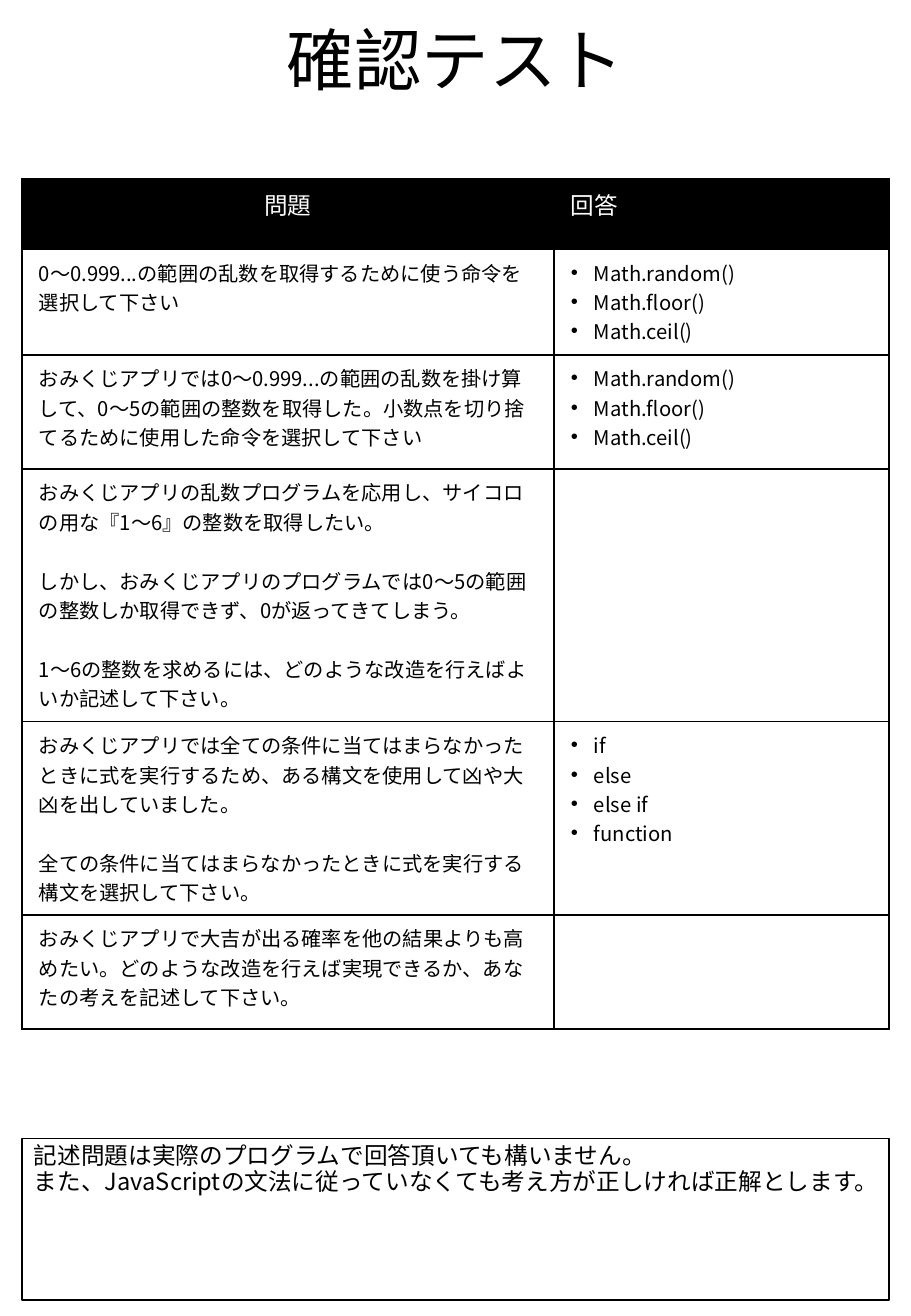
"""Builds a one-page Japanese programming quiz sheet."""
from dataclasses import dataclass

from lxml import etree
from pptx import Presentation
from pptx.dml.color import RGBColor
from pptx.enum.shapes import MSO_SHAPE
from pptx.enum.text import MSO_ANCHOR, PP_ALIGN
from pptx.oxml.ns import qn
from pptx.util import Inches, Pt

RECT = MSO_SHAPE.RECTANGLE
TOP, BOTTOM = MSO_ANCHOR.TOP, MSO_ANCHOR.BOTTOM
LEFT, CENTER = PP_ALIGN.LEFT, PP_ALIGN.CENTER


@dataclass(frozen=True)
class Theme:
    font: str = "Noto Sans CJK JP"
    ink: RGBColor = RGBColor(0, 0, 0)
    paper: RGBColor = RGBColor(255, 255, 255)
    title: int = 40
    heading: int = 14
    body: int = 12
    line: int = 1
    gap: float = 17.4


THEME = Theme()
TITLE = "確認テスト"
HEADER = ("問題", "回答")
MATH_CHOICES = ["Math.random()", "Math.floor()", "Math.ceil()"]
QUESTIONS = [
    (0.87, ["0～0.999...の範囲の乱数を取得するために使う命令を選択して下さい"], MATH_CHOICES),
    (0.94, ["おみくじアプリでは0～0.999...の範囲の乱数を掛け算して、0～5の範囲の整数を取得した。"
            "小数点を切り捨てるために使用した命令を選択して下さい"], MATH_CHOICES),
    (2.08, ["おみくじアプリの乱数プログラムを応用し、サイコロの用な『1～6』の整数を取得したい。",
            "しかし、おみくじアプリのプログラムでは0～5の範囲の整数しか取得できず、0が返ってきてしまう。",
            "1～6の整数を求めるには、どのような改造を行えばよいか記述して下さい。"], []),
    (1.59, ["おみくじアプリでは全ての条件に当てはまらなかったときに式を実行するため、"
            "ある構文を使用して凶や大凶を出していました。",
            "全ての条件に当てはまらなかったときに式を実行する構文を選択して下さい。"],
     ["if", "else", "else if", "function"]),
    (0.94, ["おみくじアプリで大吉が出る確率を他の結果よりも高めたい。"
            "どのような改造を行えば実現できるか、あなたの考えを記述して下さい。"], []),
]
NOTES = ["記述問題は実際のプログラムで回答頂いても構いません。",
         "また、JavaScriptの文法に従っていなくても考え方が正しければ正解とします。"]
MARGIN, WIDTH = 0.18, 7.14
TABLE_TOP, HEADER_HEIGHT = 1.47, 0.58
COLUMNS = (4.38, 2.76)


def write(tf, lines, size, color=THEME.ink, align=LEFT, spacing=None, gap=0):
    tf.text = "\n".join(lines)
    for i, p in enumerate(tf.paragraphs):
        p.alignment = align
        if spacing:
            p.line_spacing = spacing
        if gap and i:
            p.space_before = Pt(gap)
        for r in p.runs:
            r.font.size = Pt(size)
            r.font.name = THEME.font
            r.font.color.rgb = color
            etree.SubElement(r.font._element, qn("a:ea"), typeface=THEME.font)


def add_bullets(tf):
    for p in tf.paragraphs:
        pPr = p._p.get_or_add_pPr()
        pPr.set("marL", str(Inches(0.19)))
        pPr.set("indent", str(-Inches(0.19)))
        etree.SubElement(pPr, qn("a:buFont"), typeface="Arial")
        etree.SubElement(pPr, qn("a:buChar"), char="•")


def style_cell(cell, color):
    cell.margin_left = cell.margin_right = Inches(0.14)
    cell.margin_top = cell.margin_bottom = Inches(0.07)
    tcPr = cell._tc.get_or_add_tcPr()
    for side in ("lnL", "lnR", "lnT", "lnB"):
        ln = etree.SubElement(tcPr, qn("a:" + side), w=str(Pt(THEME.line)))
        fill = etree.SubElement(ln, qn("a:solidFill"))
        etree.SubElement(fill, qn("a:srgbClr"), val=str(THEME.ink))
    cell.fill.solid()
    cell.fill.fore_color.rgb = color


def add_title(s):
    box = s.shapes.add_textbox(Inches(0.56), Inches(0.06), Inches(6.38), Inches(0.81))
    tf = box.text_frame
    tf.word_wrap = True
    tf.vertical_anchor = BOTTOM
    write(tf, [TITLE], THEME.title, align=CENTER, spacing=0.9)


def add_quiz(s):
    heights = [HEADER_HEIGHT] + [height for height, _, _ in QUESTIONS]
    table = s.shapes.add_table(len(heights), len(COLUMNS), Inches(MARGIN), Inches(TABLE_TOP),
                               Inches(WIDTH), Inches(sum(heights))).table
    for column, width in zip(table.columns, COLUMNS):
        column.width = Inches(width)
    for i, height in enumerate(heights):
        table.rows[i].height = Inches(height)
        for cell in table.rows[i].cells:
            style_cell(cell, THEME.paper if i else THEME.ink)
    for j, (label, align) in enumerate(zip(HEADER, (CENTER, LEFT))):
        write(table.cell(0, j).text_frame, [label], THEME.heading, THEME.paper, align)
    for i, (_, question, choices) in enumerate(QUESTIONS, 1):
        write(table.cell(i, 0).text_frame, question, THEME.body, gap=THEME.gap)
        if choices:
            tf = table.cell(i, 1).text_frame
            write(tf, choices, THEME.body)
            add_bullets(tf)


def add_notes_box(s):
    sp = s.shapes.add_shape(RECT, Inches(MARGIN), Inches(9.37), Inches(WIDTH), Inches(1.33))
    sp.shadow.inherit = False
    sp.fill.solid()
    sp.fill.fore_color.rgb = THEME.paper
    sp.line.color.rgb = THEME.ink
    sp.line.width = Pt(THEME.line)
    tf = sp.text_frame
    tf.word_wrap = True
    tf.vertical_anchor = TOP
    write(tf, NOTES, THEME.heading, spacing=0.9)


def main():
    prs = Presentation()
    prs.slide_width, prs.slide_height = Inches(7.5), Inches(10.83)
    s = prs.slides.add_slide(prs.slide_layouts[6])
    add_title(s)
    add_quiz(s)
    add_notes_box(s)
    prs.save("out.pptx")


if __name__ == "__main__":
    main()
